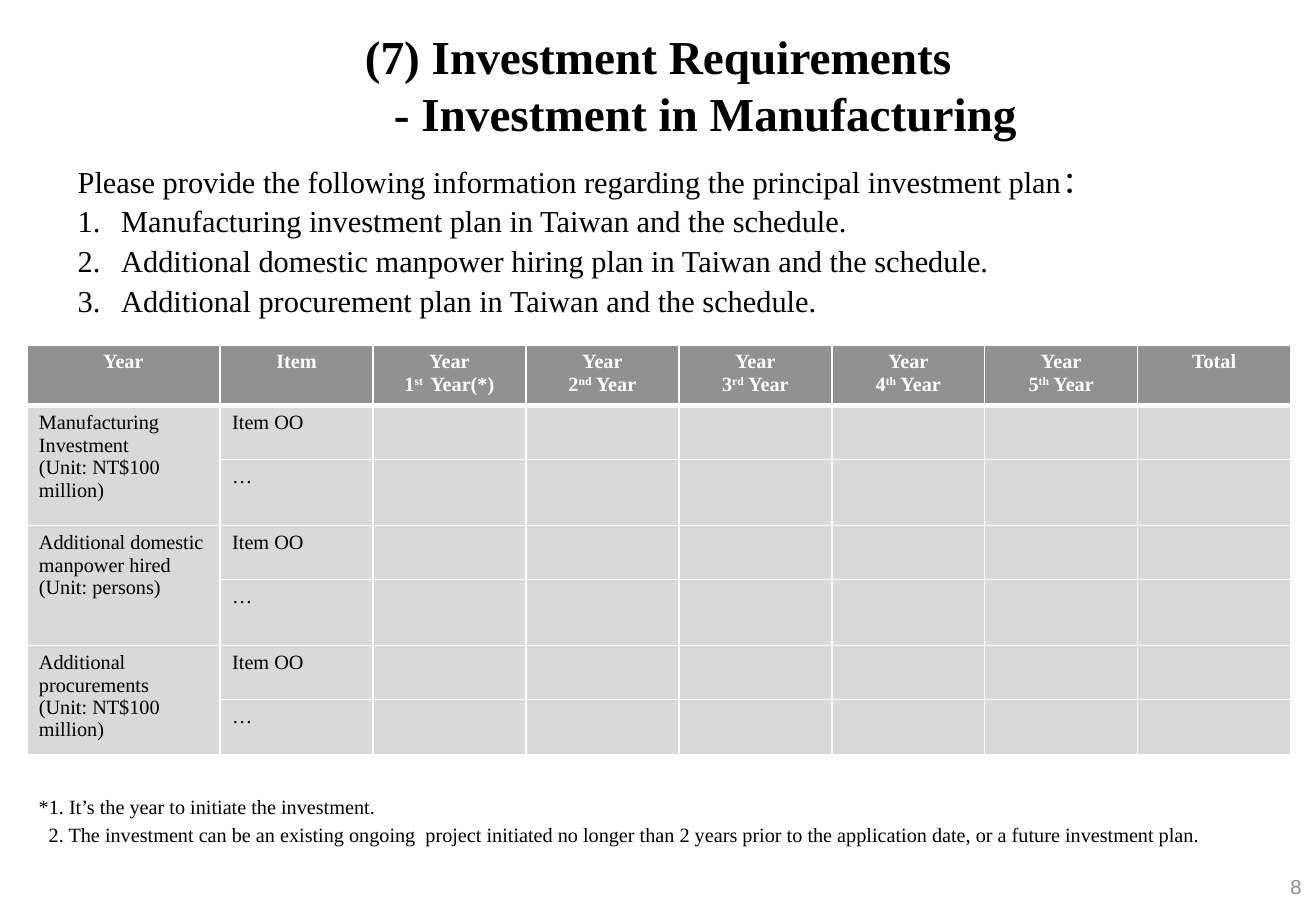
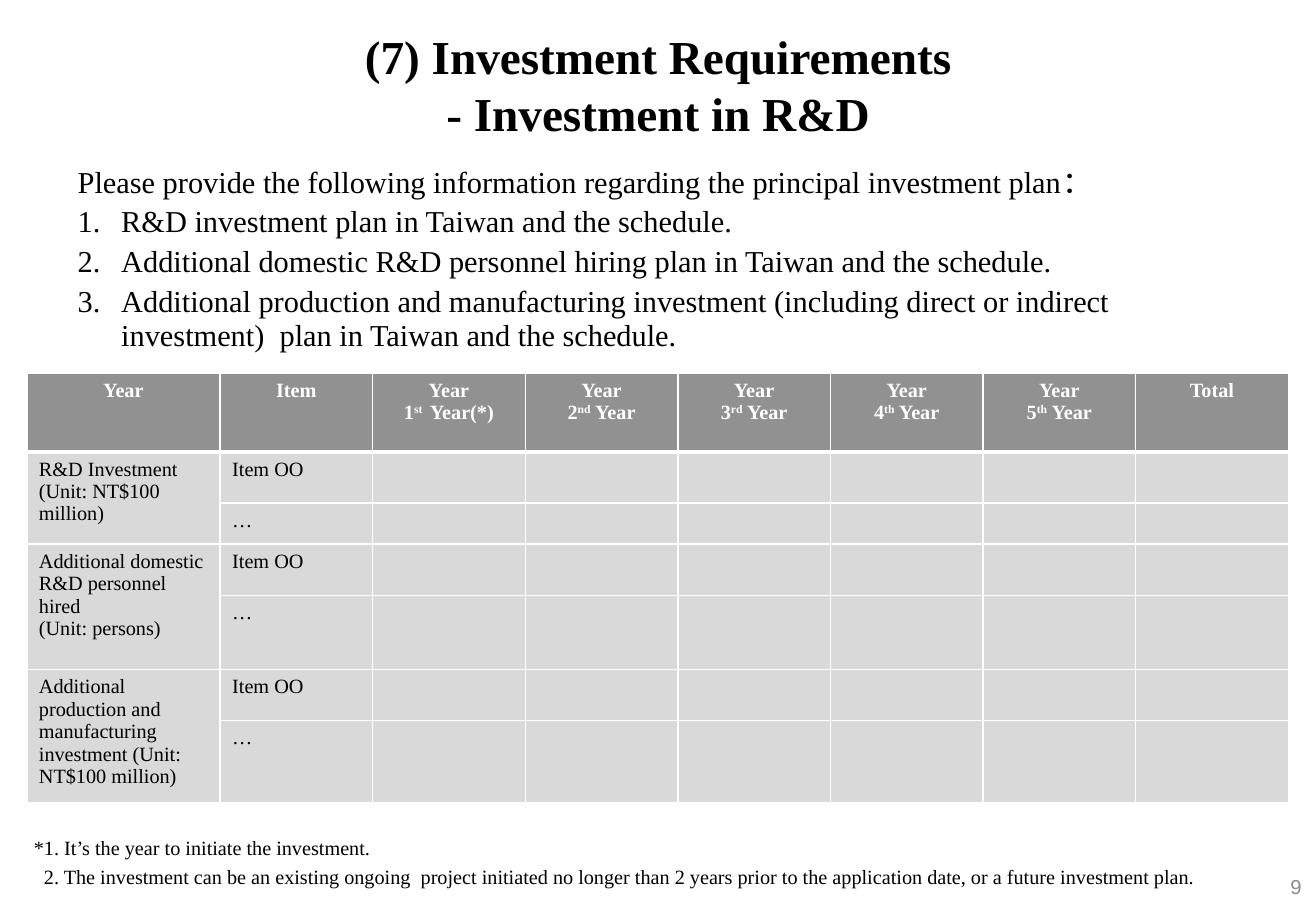
from pptx import Presentation
from pptx.dml.color import RGBColor
from pptx.enum.text import MSO_ANCHOR, MSO_AUTO_SIZE, PP_ALIGN
from pptx.oxml.xmlchemy import OxmlElement
from pptx.util import Cm, Pt

# Shared look
BLACK = RGBColor(0x00, 0x00, 0x00)
WHITE = RGBColor(0xFF, 0xFF, 0xFF)
HEADER_GREY = RGBColor(0x91, 0x91, 0x91)
CELL_GREY = RGBColor(0xD9, 0xD9, 0xD9)
NUMBER_GREY = RGBColor(0x8C, 0x8C, 0x8C)
SERIF, SANS = "Times New Roman", "Arial"
CENTER, RIGHT = PP_ALIGN.CENTER, PP_ALIGN.RIGHT
MIDDLE, TOP = MSO_ANCHOR.MIDDLE, MSO_ANCHOR.TOP
NO_AUTOFIT = MSO_AUTO_SIZE.NONE

TOPIC_WIDTH = 4.04
ORDINALS = ["st ", "nd", "rd", "th", "th"]
INTRO = "Please provide the following information regarding the principal investment plan："
FOOTNOTES = [
    "*1. It’s the year to initiate the investment.",
    "2. The investment can be an existing ongoing  project initiated no longer "
    "than 2 years prior to the application date, or a future investment plan.",
]

# What differs between the slides; lengths in cm
MANUFACTURING = {
    "number": "8",
    "subtitle": "- Investment in Manufacturing",
    "subtitle_indent": 1.97,
    "plans": [
        "Manufacturing investment plan in Taiwan and the schedule.",
        "Additional domestic manpower hiring plan in Taiwan and the schedule.",
        "Additional procurement plan in Taiwan and the schedule.",
    ],
    "topics": [
        "Manufacturing Investment\n(Unit: NT$100 million)",
        "Additional domestic manpower hired\n(Unit: persons)",
        "Additional procurements\n(Unit: NT$100 million)",
    ],
    "table_top": 7.21,
    "table_width": 26.42,
    "row_heights": [1.19, 1.13, 1.38, 1.13, 1.38, 1.13, 1.13],
    "footnote_box": (0.56, 16.48, 25.6, 1.83),
}
RESEARCH = {
    "number": "9",
    "subtitle": "- Investment in R&D",
    "subtitle_indent": 0,
    "plans": [
        "R&D investment plan in Taiwan and the schedule.",
        "Additional domestic R&D personnel hiring plan in Taiwan and the schedule.",
        "Additional production and manufacturing investment (including direct or "
        "indirect investment)  plan in Taiwan and the schedule.",
    ],
    "topics": [
        "R&D Investment\n(Unit: NT$100 million)",
        "Additional domestic R&D personnel  hired\n(Unit: persons)",
        "Additional production and manufacturing investment (Unit: NT$100 million)",
    ],
    "table_top": 7.8,
    "table_width": 26.37,
    "row_heights": [1.65, 1.07, 0.86, 1.07, 1.55, 1.07, 1.55],
    "footnote_box": (0.46, 17.35, 25.17, 1.37),
}


def place(shape, left, top, width, height):
    shape.left, shape.top = Cm(left), Cm(top)
    shape.width, shape.height = Cm(width), Cm(height)


def style_text(frame, size, color, bold=False, font=SERIF, align=None):
    for paragraph in frame.paragraphs:
        if align is not None:
            paragraph.alignment = align
        for run in paragraph.runs:
            run.font.name = font
            run.font.size = Pt(size)
            run.font.bold = bold
            run.font.color.rgb = color


def set_indent(paragraph, margin, first_line=0):
    properties = paragraph._p.get_or_add_pPr()
    properties.set("marL", str(Cm(margin)))
    properties.set("indent", str(Cm(first_line)))
    return properties


def set_bullet(properties, numbered):
    bullet = OxmlElement("a:buAutoNum" if numbered else "a:buNone")
    if numbered:
        bullet.set("type", "arabicPeriod")
    properties.append(bullet)


def add_title(slide, subtitle, subtitle_indent):
    title = slide.shapes.title
    place(title, 1.37, 0.1, 24.77, 3.3)
    frame = title.text_frame
    frame.auto_size = NO_AUTOFIT
    frame.vertical_anchor = MIDDLE
    frame.text = "(7) Investment Requirements\n" + subtitle
    style_text(frame, 28, BLACK, bold=True, align=CENTER)
    for paragraph in frame.paragraphs:
        paragraph.line_spacing = Pt(34)
    set_indent(frame.paragraphs[1], subtitle_indent)


def add_plans(slide, plans):
    body = slide.placeholders[1]
    place(body, 1.37, 3.33, 24.77, 3.81)
    frame = body.text_frame
    frame.auto_size = NO_AUTOFIT
    frame.vertical_anchor = TOP
    frame.text = "\n".join([INTRO] + plans)
    style_text(frame, 18, BLACK)
    for index, paragraph in enumerate(frame.paragraphs):
        paragraph.line_spacing = Pt(20)
        paragraph.space_before = Pt(3.6)
        hanging = 0.91 if index else 0
        set_bullet(set_indent(paragraph, hanging, -hanging), numbered=index > 0)


def add_text_box(slide, box, text):
    left, top, width, height = map(Cm, box)
    frame = slide.shapes.add_textbox(left, top, width, height).text_frame
    frame.word_wrap = True
    frame.text = text
    return frame


def add_page_number(slide, number):
    frame = add_text_box(slide, (21.26, 18.03, 6.2, 1.02), number)
    frame.vertical_anchor = MIDDLE
    style_text(frame, 12, NUMBER_GREY, font=SANS, align=RIGHT)


def add_footnotes(slide, box):
    frame = add_text_box(slide, box, "\n".join(FOOTNOTES))
    style_text(frame, 12, BLACK)
    for paragraph in frame.paragraphs:
        paragraph.space_before = Pt(2.4)
    set_indent(frame.paragraphs[1], 1.02, -0.81)


def add_border(cell, side, points):
    line = OxmlElement("a:ln" + side)
    line.set("w", str(Pt(points)))
    fill = OxmlElement("a:solidFill")
    color = OxmlElement("a:srgbClr")
    color.set("val", str(WHITE))
    fill.append(color)
    line.append(fill)
    cell._tc.get_or_add_tcPr().append(line)


def format_cell(cell, row):
    for side in "LRTB":
        under_header = (row, side) in ((0, "B"), (1, "T"))
        add_border(cell, side, 3 if under_header else 1)
    cell.fill.solid()
    cell.fill.fore_color.rgb = CELL_GREY if row else HEADER_GREY
    if cell.text_frame.text:
        style_text(cell.text_frame, 12, BLACK if row else WHITE,
                   bold=row == 0, align=None if row else CENTER)
    else:
        # Empty cells keep the row height of 12 pt text
        end = OxmlElement("a:endParaRPr")
        end.set("sz", "1200")
        cell.text_frame.paragraphs[0]._p.append(end)


def write_year_heading(cell, year, ordinal):
    cell.text_frame.text = "Year\n" + str(year)
    paragraph = cell.text_frame.paragraphs[1]
    raised = paragraph.add_run()
    raised.text = ordinal
    raised.font._element.set("baseline", "30000")
    paragraph.add_run().text = " Year(*)" if year == 1 else " Year"


def add_investment_table(slide, topics, top, width, row_heights):
    column_count = len(ORDINALS) + 3
    table = slide.shapes.add_table(
        len(row_heights), column_count, Cm(0.56), Cm(top),
        Cm(width), Cm(sum(row_heights))).table
    for index, column in enumerate(table.columns):
        shared_width = (width - TOPIC_WIDTH) / (column_count - 1)
        column.width = Cm(shared_width if index else TOPIC_WIDTH)
    for row, height in zip(table.rows, row_heights):
        row.height = Cm(height)

    # Header row
    for column, heading in ((0, "Year"), (1, "Item"), (column_count - 1, "Total")):
        table.cell(0, column).text_frame.text = heading
    for year, ordinal in enumerate(ORDINALS, start=1):
        write_year_heading(table.cell(0, year + 1), year, ordinal)

    # Each topic spans two item rows
    for index, topic in enumerate(topics):
        first = 1 + 2 * index
        table.cell(first, 0).merge(table.cell(first + 1, 0))
        table.cell(first, 0).text_frame.text = topic
        table.cell(first, 1).text_frame.text = "Item OO"
        table.cell(first + 1, 1).text_frame.text = "…"

    for row in range(len(row_heights)):
        for column in range(column_count):
            format_cell(table.cell(row, column), row)


def add_requirements_slide(prs, content):
    slide = prs.slides.add_slide(prs.slide_layouts[1])
    add_title(slide, content["subtitle"], content["subtitle_indent"])
    add_plans(slide, content["plans"])
    add_page_number(slide, content["number"])
    add_investment_table(slide, content["topics"], content["table_top"],
                         content["table_width"], content["row_heights"])
    add_footnotes(slide, content["footnote_box"])


def main():
    prs = Presentation()
    prs.slide_width, prs.slide_height = Cm(27.51), Cm(19.05)
    for content in (MANUFACTURING, RESEARCH):
        add_requirements_slide(prs, content)
    prs.save("out.pptx")


if __name__ == "__main__":
    main()
